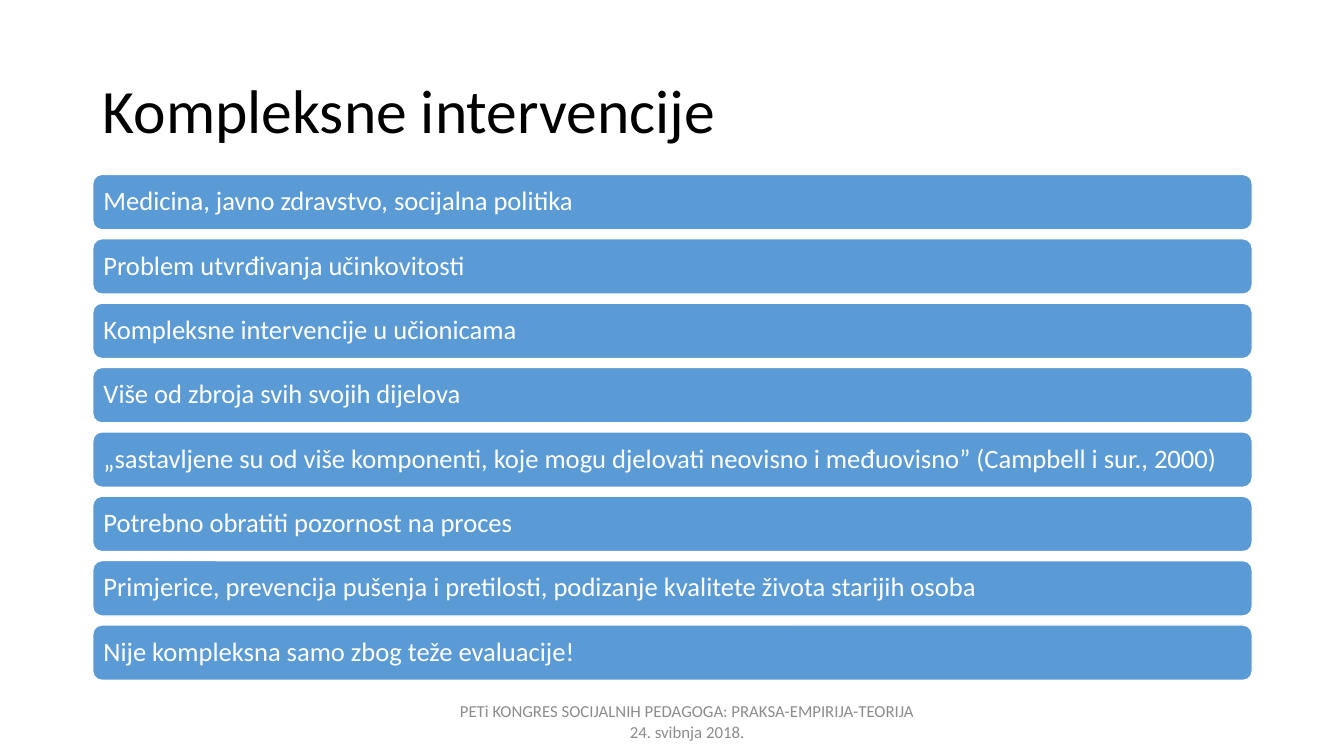
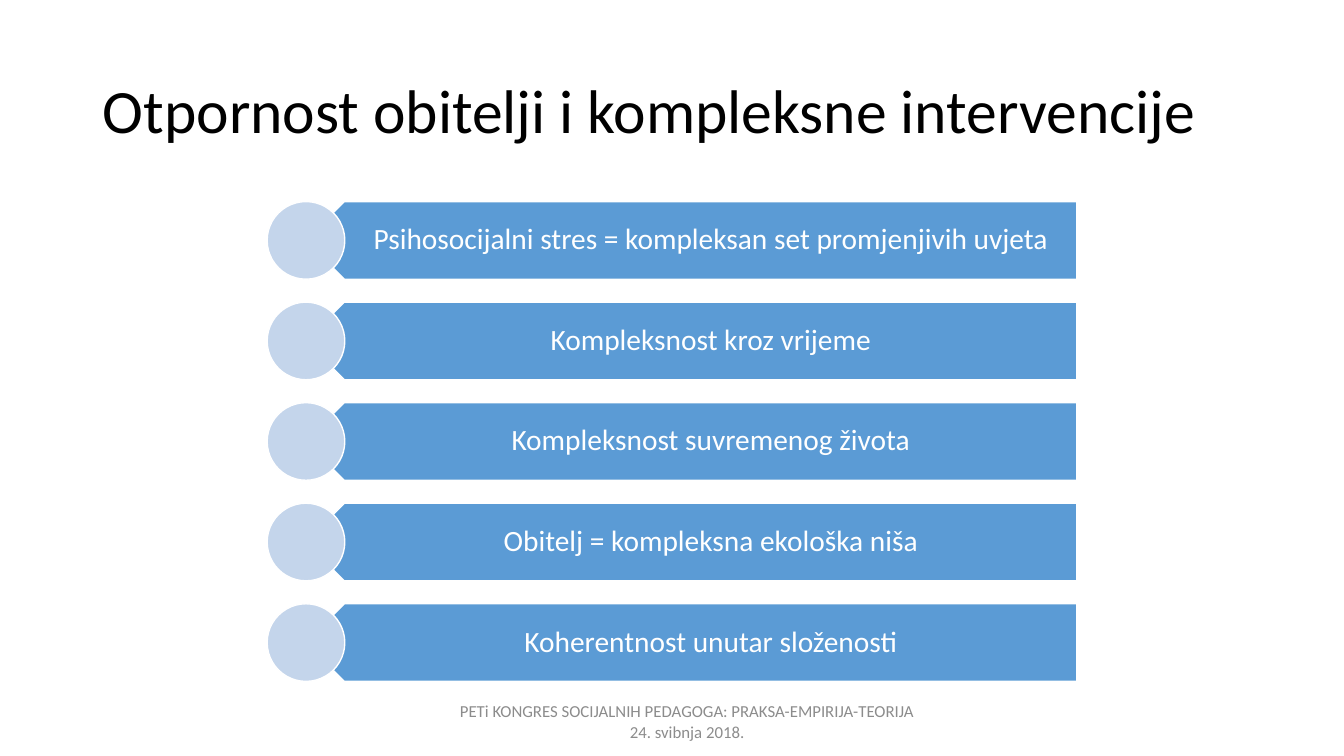
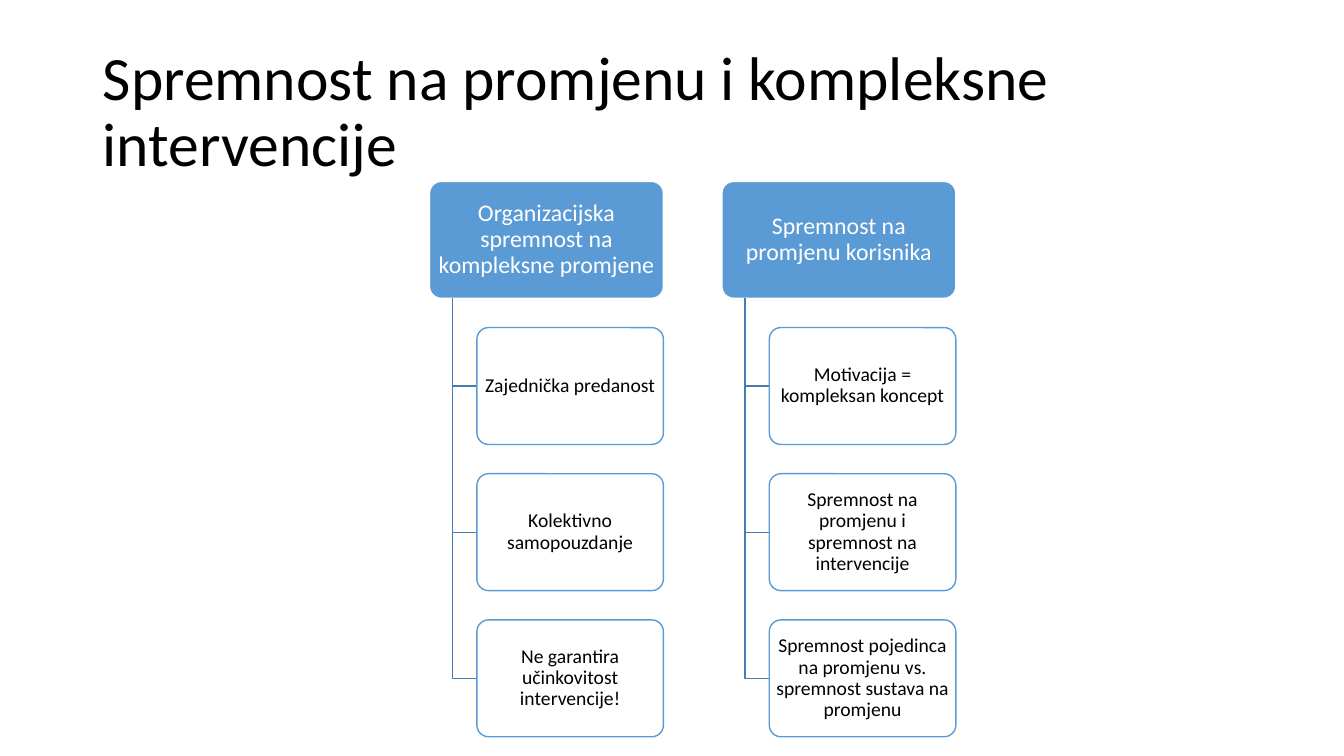
import pptx
import pptx.util
import pptx.dml.color
import pptx.enum.shapes
import pptx.enum.text
import pptx.oxml
import pptx.oxml.ns

Inches = pptx.util.Inches
Kind = pptx.enum.shapes.MSO_SHAPE
Align = pptx.enum.text.PP_ALIGN


class Theme:
    font = "Calibri"
    blue = pptx.dml.color.RGBColor.from_string("5B9BD5")
    pale = pptx.dml.color.RGBColor.from_string("C4D5EB")
    steel = pptx.dml.color.RGBColor.from_string("497CAB")
    grey = pptx.dml.color.RGBColor.from_string("8C8C8C")
    white = pptx.dml.color.RGBColor.from_string("FFFFFF")
    black = pptx.dml.color.RGBColor.from_string("000000")
    title = 44
    arrow = 21
    bar = 19
    head = 17
    leaf = 14
    foot = 12


def write(shape, text, size, color, align=Align.CENTER, pads=(0.1, 0.05, 0.1, 0.05), space=0.9):
    frame = shape.text_frame
    frame.word_wrap = True
    frame.auto_size = pptx.enum.text.MSO_AUTO_SIZE.NONE
    frame.vertical_anchor = pptx.enum.text.MSO_ANCHOR.MIDDLE
    frame.margin_left, frame.margin_top, frame.margin_right, frame.margin_bottom = map(Inches, pads)
    para = frame.paragraphs[0]
    para.alignment = align
    para.line_spacing = space
    run = para.add_run()
    run.text = text
    run.font.name = Theme.font
    run.font.size = pptx.util.Pt(size)
    run.font.color.rgb = color


def draw(slide, kind, box, fill, line):
    shape = slide.shapes.add_shape(kind, *map(Inches, box))
    shape.shadow.inherit = False
    shape.fill.solid()
    shape.fill.fore_color.rgb = fill
    shape.line.color.rgb = line
    shape.line.width = pptx.util.Pt(1)
    return shape


deck = pptx.Presentation()
deck.slide_width = Inches(13.33)
deck.slide_height = Inches(7.5)

pages = []
for text, width, foot in (
    ("Kompleksne intervencije", 11.5, True),
    ("Otpornost obitelji i kompleksne intervencije", 11.5, True),
    ("Spremnost na promjenu i kompleksne intervencije", 11.89, False),
):
    slide = deck.slides.add_slide(deck.slide_layouts[5])
    title = slide.shapes.title
    title.left, title.top = Inches(0.92), Inches(0.4)
    title.width, title.height = Inches(width), Inches(1.45)
    write(title, text, Theme.title, Theme.black, Align.LEFT)
    if foot:
        note = slide.shapes.add_textbox(Inches(4.42), Inches(6.96), Inches(4.79), Inches(0.39))
        write(note, "PETi KONGRES SOCIJALNIH PEDAGOGA: PRAKSA-EMPIRIJA-TEORIJA 24. svibnja 2018.",
              Theme.foot, Theme.grey, space=1.0)
    pages.append(slide)

bars = (
    "Medicina, javno zdravstvo, socijalna politika",
    "Problem utvrđivanja učinkovitosti",
    "Kompleksne intervencije u učionicama",
    "Više od zbroja svih svojih dijelova",
    "„sastavljene su od više komponenti, koje mogu djelovati neovisno i međuovisno” (Campbell i sur., 2000)",
    "Potrebno obratiti pozornost na proces",
    "Primjerice, prevencija pušenja i pretilosti, podizanje kvalitete života starijih osoba",
    "Nije kompleksna samo zbog teže evaluacije!",
)
for row, text in enumerate(bars):
    top = 1.73 + row * 4.47 / 7
    bar = draw(pages[0], Kind.ROUNDED_RECTANGLE, (0.92, top, 11.5, 0.55), Theme.blue, Theme.white)
    write(bar, text, Theme.bar, Theme.white, Align.LEFT, (0.08, 0.08, 0.08, 0.08))

arrows = (
    "Psihosocijalni stres = kompleksan set promjenjivih uvjeta",
    "Kompleksnost kroz vrijeme",
    "Kompleksnost suvremenog života",
    "Obitelj = kompleksna ekološka niša",
    "Koherentnost unutar složenosti",
)
size = 0.77
for row, text in enumerate(arrows):
    top = 2 + row * 3.99 / 4
    arrow = draw(pages[1], Kind.PENTAGON, (3.03, top, 7.65, size), Theme.blue, Theme.white)
    arrow.rotation = 180
    label = pages[1].shapes.add_textbox(Inches(3.23), Inches(top), Inches(7.46), Inches(size))
    write(label, text, Theme.arrow, Theme.white, pads=(0.34, 0.09, 0.16, 0.09))
    draw(pages[1], Kind.OVAL, (2.65, top, size, size), Theme.pale, Theme.white)

trees = (
    ("Organizacijska spremnost na kompleksne promjene", (
        "Zajednička predanost",
        "Kolektivno samopouzdanje",
        "Ne garantira učinkovitost intervencije!",
    )),
    ("Spremnost na promjenu korisnika", (
        "Motivacija = kompleksan koncept",
        "Spremnost na promjenu i spremnost na intervencije",
        "Spremnost pojedinca na promjenu vs. spremnost sustava na promjenu",
    )),
)
first, high = 1.8, 1.16
for col, (text, leaves) in enumerate(trees):
    left = 4.26 + col * 2.9
    head = draw(pages[2], Kind.ROUNDED_RECTANGLE, (left, first, 2.32, high), Theme.blue, Theme.white)
    head.adjustments[0] = 0.1
    write(head, text, Theme.head, Theme.white, pads=(0.04, 0.02, 0.04, 0.02))
    trunk, edge = Inches(left + 0.23), Inches(left + 0.47)
    for row, text in enumerate(leaves, 1):
        top = first + row * high * 1.25
        mid = Inches(top + high / 2)
        pen = pages[2].shapes.build_freeform(trunk, Inches(first + high))
        pen.add_line_segments([(trunk, mid), (edge, mid)], close=False)
        branch = pen.convert_to_shape()
        branch.shadow.inherit = False
        branch.fill.background()
        branch.line.color.rgb = Theme.steel
        branch.line.width = pptx.util.Pt(1)
        leaf = draw(pages[2], Kind.ROUNDED_RECTANGLE, (left + 0.47, top, 1.85, high), Theme.white, Theme.blue)
        leaf.adjustments[0] = 0.1
        tint = leaf.element.spPr.find(pptx.oxml.ns.qn("a:solidFill"))[0]
        tint.append(pptx.oxml.parse_xml(
            '<a:alpha xmlns:a="http://schemas.openxmlformats.org/drawingml/2006/main" val="90000"/>'))
        write(leaf, text, Theme.leaf, Theme.black, pads=(0.03, 0.02, 0.03, 0.02))

deck.save("out.pptx")
